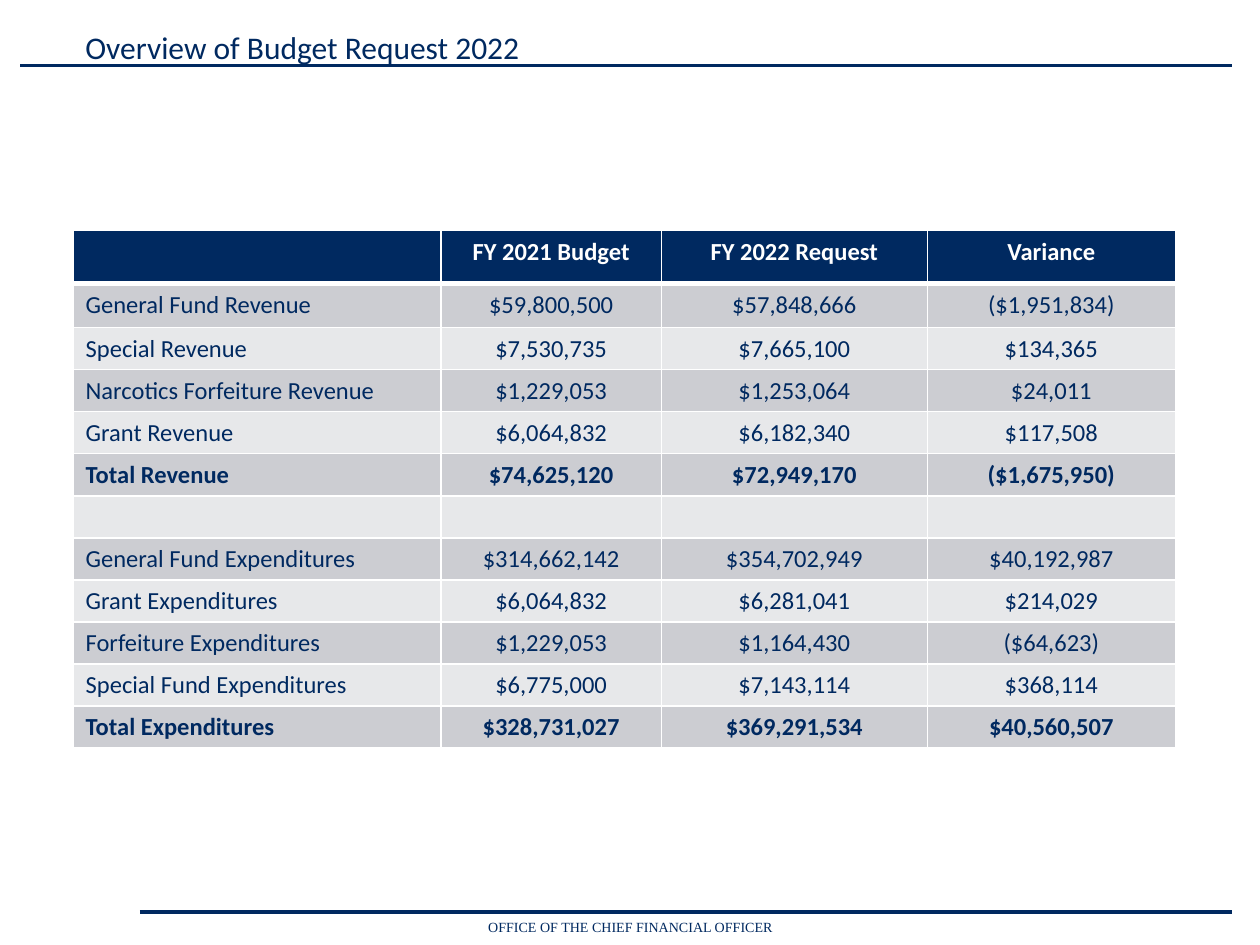
from lxml import etree
from pptx import Presentation
from pptx.dml.color import RGBColor
from pptx.enum import text
from pptx.oxml import ns
from pptx.enum import shapes
from pptx import util as u

NAVY = RGBColor(0x00, 0x29, 0x60)
WHITE = RGBColor(0xFF, 0xFF, 0xFF)
BAND_DARK = RGBColor(0xCC, 0xCD, 0xD2)
BAND_LIGHT = RGBColor(0xE7, 0xE8, 0xEA)

ROWS = [
    ("", "FY 2021 Budget", "FY 2022 Request", "Variance"),
    ("General Fund Revenue", "$59,800,500", "$57,848,666", "($1,951,834)"),
    ("Special Revenue", "$7,530,735", "$7,665,100", "$134,365"),
    ("Narcotics Forfeiture Revenue", "$1,229,053", "$1,253,064", "$24,011"),
    ("Grant Revenue", "$6,064,832", "$6,182,340", "$117,508"),
    ("Total Revenue", "$74,625,120", "$72,949,170", "($1,675,950)"),
    ("", "", "", ""),
    ("General Fund Expenditures", "$314,662,142", "$354,702,949", "$40,192,987"),
    ("Grant Expenditures", "$6,064,832", "$6,281,041", "$214,029"),
    ("Forfeiture Expenditures", "$1,229,053", "$1,164,430", "($64,623)"),
    ("Special Fund Expenditures", "$6,775,000", "$7,143,114", "$368,114"),
    ("Total Expenditures", "$328,731,027", "$369,291,534", "$40,560,507"),
]
COL_WIDTHS = [2.92, 1.75, 2.11, 1.97]
ROW_HEIGHTS = [0.42, 0.35] + [0.33] * 10


def write(tf, words, size, font, color, bold=False, align=text.PP_ALIGN.LEFT):
    tf.text = words
    p = tf.paragraphs[0]
    p.alignment = align
    for r in p.runs:
        r.font.size = u.Pt(size)
        r.font.name = font
        r.font.color.rgb = color
        r.font.bold = bold
    if not words:  # keeps an empty cell as low as the others
        etree.SubElement(p._p, ns.qn("a:endParaRPr"), sz=str(size * 100))


def add_border(cell, side, points):
    ln = etree.SubElement(cell._tc.get_or_add_tcPr(), ns.qn("a:ln" + side),
                          w=str(u.Pt(points)))
    fill = etree.SubElement(ln, ns.qn("a:solidFill"))
    etree.SubElement(fill, ns.qn("a:srgbClr"), val=str(WHITE))


prs = Presentation()
prs.slide_width, prs.slide_height = u.Inches(10), u.Inches(7.5)
s = prs.slides.add_slide(prs.slide_layouts[6])

# Header and footer rules
for left, y in [(0.16, 0.52), (1.11, 7.24)]:
    line = s.shapes.add_connector(shapes.MSO_CONNECTOR.STRAIGHT, u.Inches(left),
                                  u.Inches(y), u.Inches(9.78), u.Inches(y))
    line.line.color.rgb = NAVY
    line.line.width = u.Pt(2)
    etree.SubElement(line._element.spPr, ns.qn("a:effectLst"))

# Footer and title
for box, words, size, font, align in [
    ((2.56, 7.24, 4.89, 0.24), "OFFICE OF THE CHIEF FINANCIAL OFFICER", 8,
     "Times New Roman", text.PP_ALIGN.CENTER),
    ((0.58, 0.17, 4, 0.4), "Overview of Budget Request 2022", 18,
     "Calibri", text.PP_ALIGN.LEFT),
]:
    tf = s.shapes.add_textbox(*map(u.Inches, box)).text_frame
    tf.word_wrap = True
    write(tf, words, size, font, NAVY, align=align)

# Budget table
table = s.shapes.add_table(len(ROWS), len(COL_WIDTHS), u.Inches(0.58), u.Inches(1.83),
                           u.Inches(8.75), u.Inches(4.1)).table
for col, width in zip(table.columns, COL_WIDTHS):
    col.width = u.Inches(width)
for row, height in zip(table.rows, ROW_HEIGHTS):
    row.height = u.Inches(height)

for i, values in enumerate(ROWS):
    header = i == 0
    bold = header or values[0].startswith("Total")
    for j, value in enumerate(values):
        cell = table.cell(i, j)
        align = text.PP_ALIGN.CENTER if j else text.PP_ALIGN.LEFT
        write(cell.text_frame, value, 14, "Calibri", WHITE if header else NAVY, bold, align)
        for side in "LRTB":
            thick = (i, side) in [(0, "B"), (1, "T")]
            add_border(cell, side, 3 if thick else 1)
        cell.fill.solid()
        cell.fill.fore_color.rgb = NAVY if header else BAND_DARK if i % 2 else BAND_LIGHT

prs.save("out.pptx")
